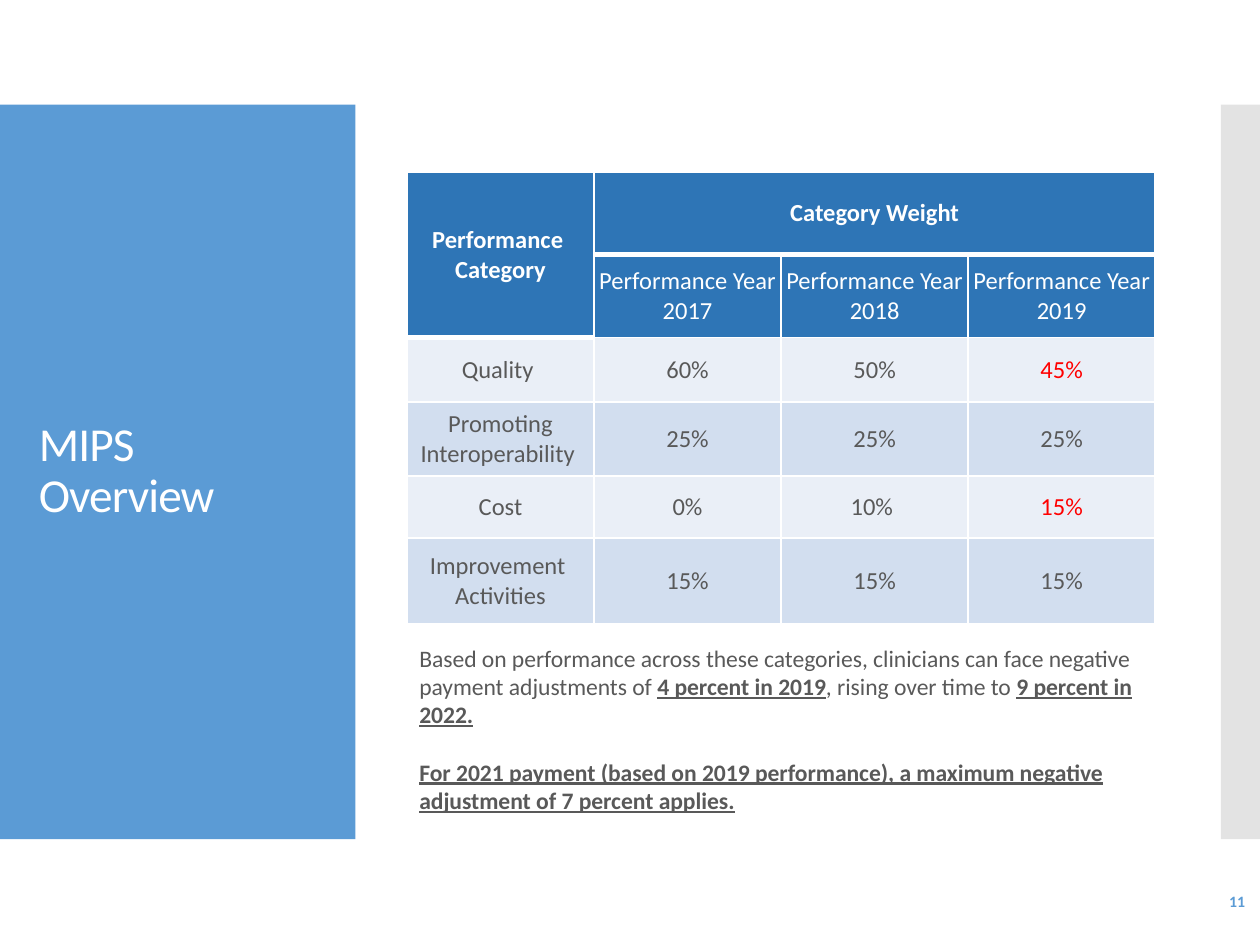
from dataclasses import dataclass

from lxml.etree import SubElement
from pptx import Presentation
from pptx.dml.color import RGBColor
from pptx.enum.shapes import MSO_SHAPE
from pptx.enum.text import MSO_ANCHOR, PP_ALIGN
from pptx.oxml.ns import qn
from pptx.util import Inches, Pt


@dataclass(frozen=True)
class Theme:
    font: str = "Calibri"
    white: str = "FFFFFF"
    accent: str = "5B9BD5"
    side: str = "C8C8C8"
    header: str = "2E75B6"
    bands: tuple = ("EAEFF7", "D2DEEF")
    body: str = "595959"
    changed: str = "FF0000"
    title_size: float = 27
    table_size: float = 14
    note_size: float = 13.5
    number_size: float = 9


@dataclass(frozen=True)
class Area:
    left: float
    top: float
    width: float
    height: float

    def lengths(self) -> tuple:
        return tuple(Inches(n) for n in (self.left, self.top, self.width, self.height))


@dataclass(frozen=True)
class Phrase:
    text: str
    strong: bool = False


THEME = Theme()
HEADER_ROWS = 2
ROW_HEIGHTS = (0.65, 0.66, 0.51, 0.59, 0.49, 0.68)
ROWS = (
    ("Performance \nCategory", "Category Weight", "", ""),
    ("", "Performance Year 2017", "Performance Year 2018", "Performance Year 2019"),
    ("Quality ", "60%", "50%", "45%"),
    ("Promoting Interoperability ", "25%", "25%", "25%"),
    ("Cost", "0%", "10% ", "15%"),
    ("Improvement \nActivities", "15%", "15%", "15%"),
)
CHANGED_CELLS = {(2, 3), (4, 3)}
NOTES = (
    (
        Phrase("Based on performance across these categories, clinicians can face "
               "negative payment adjustments of "),
        Phrase("4 percent in 2019", True),
        Phrase(", rising over time to "),
        Phrase("9 percent in 2022.", True),
    ),
    (
        Phrase("For 2021 payment (based on 2019 performance), a maximum negative "
               "adjustment of 7 percent applies.", True),
    ),
)


def style_font(font, size: float, color: str, bold: bool = False) -> None:
    font.name = THEME.font
    font.size = Pt(size)
    font.bold = bold
    font.color.rgb = RGBColor.from_string(color)


def add_panel(page, area: Area, color: str, opacity: int = 100) -> None:
    panel = page.shapes.add_shape(MSO_SHAPE.RECTANGLE, *area.lengths())
    panel.shadow.inherit = False
    panel.line.fill.background()
    panel.fill.solid()
    panel.fill.fore_color.rgb = RGBColor.from_string(color)
    if opacity < 100:
        tint = panel.fill._xPr.find(qn("a:solidFill"))[0]
        SubElement(tint, qn("a:alpha"), val=str(opacity * 1000))


def add_text_frame(page, area: Area, anchor=MSO_ANCHOR.MIDDLE):
    frame = page.shapes.add_textbox(*area.lengths()).text_frame
    frame.word_wrap = True
    frame.vertical_anchor = anchor
    return frame


def add_title(page, area: Area, text: str) -> None:
    para = add_text_frame(page, area).paragraphs[0]
    span = para.add_run()
    span.text = text
    para.line_spacing = 0.9
    style_font(span.font, THEME.title_size, THEME.white)
    span.font._element.set("spc", "-50")


def add_notes(page, area: Area) -> None:
    frame = add_text_frame(page, area, MSO_ANCHOR.TOP)
    for index, phrases in enumerate(NOTES):
        para = frame.add_paragraph() if index else frame.paragraphs[0]
        if index:
            para.space_before = Pt(16.5)
        for phrase in phrases:
            span = para.add_run()
            span.text = phrase.text
            style_font(span.font, THEME.note_size, THEME.body, phrase.strong)
            span.font.underline = phrase.strong


def add_page_number(page, area: Area, text: str) -> None:
    para = add_text_frame(page, area).paragraphs[0]
    para.text = text
    para.alignment = PP_ALIGN.RIGHT
    style_font(para.font, THEME.number_size, THEME.accent, True)


def set_borders(cell, row: int, column: int) -> None:
    # The heavy rule runs under the first header row and the merged corner
    heavy_row = HEADER_ROWS if column == 0 else 1
    widths = {
        "L": 1,
        "R": 1,
        "T": 3 if row == heavy_row else 1,
        "B": 3 if row == heavy_row - 1 or (row, column) == (0, 0) else 1,
    }
    properties = cell._tc.get_or_add_tcPr()
    for side, width in widths.items():
        line = SubElement(properties, qn(f"a:ln{side}"), w=str(Pt(width)))
        SubElement(SubElement(line, qn("a:solidFill")), qn("a:srgbClr"), val=THEME.white)


def fill_cell(cell, row: int, column: int, text: str) -> None:
    is_header = row < HEADER_ROWS
    if is_header:
        fill, color = THEME.header, THEME.white
    else:
        fill = THEME.bands[(row - HEADER_ROWS) % 2]
        color = THEME.changed if (row, column) in CHANGED_CELLS else THEME.body
    set_borders(cell, row, column)
    cell.fill.solid()
    cell.fill.fore_color.rgb = RGBColor.from_string(fill)
    cell.vertical_anchor = MSO_ANCHOR.MIDDLE
    cell.margin_left = cell.margin_right = Inches(0.04)
    cell.margin_top = cell.margin_bottom = Inches(0.02)
    cell.text = text
    for para in cell.text_frame.paragraphs:
        para.alignment = PP_ALIGN.CENTER
        style_font(para.font, THEME.table_size, color, row == 0)


def add_weight_table(page, area: Area) -> None:
    column_count = len(ROWS[0])
    table = page.shapes.add_table(len(ROWS), column_count, *area.lengths()).table
    for column in table.columns:
        column.width = Inches(area.width / column_count)
    for row, height in zip(table.rows, ROW_HEIGHTS):
        row.height = Inches(height)
    for row, texts in enumerate(ROWS):
        for column, text in enumerate(texts):
            fill_cell(table.cell(row, column), row, column, text)
    table.cell(0, 0).merge(table.cell(1, 0))
    table.cell(0, 1).merge(table.cell(0, 3))


def main() -> None:
    deck = Presentation()
    deck.slide_width, deck.slide_height = Inches(10), Inches(7.5)
    page = deck.slides.add_slide(deck.slide_layouts[6])

    # Side panels and title
    add_panel(page, Area(0, 0.83, 2.82, 5.83), THEME.accent)
    add_panel(page, Area(9.69, 0.83, 0.32, 5.83), THEME.side, opacity=50)
    add_title(page, Area(0.21, 1.23, 2.42, 5.03), "MIPS Overview")

    # Category weights, notes and page number
    add_weight_table(page, Area(3.23, 1.37, 5.94, sum(ROW_HEIGHTS)))
    add_notes(page, Area(3.23, 5.06, 5.94, 1.46))
    add_page_number(page, Area(8.72, 6.95, 1.26, 0.4), "11")

    deck.save("out.pptx")


if __name__ == "__main__":
    main()
